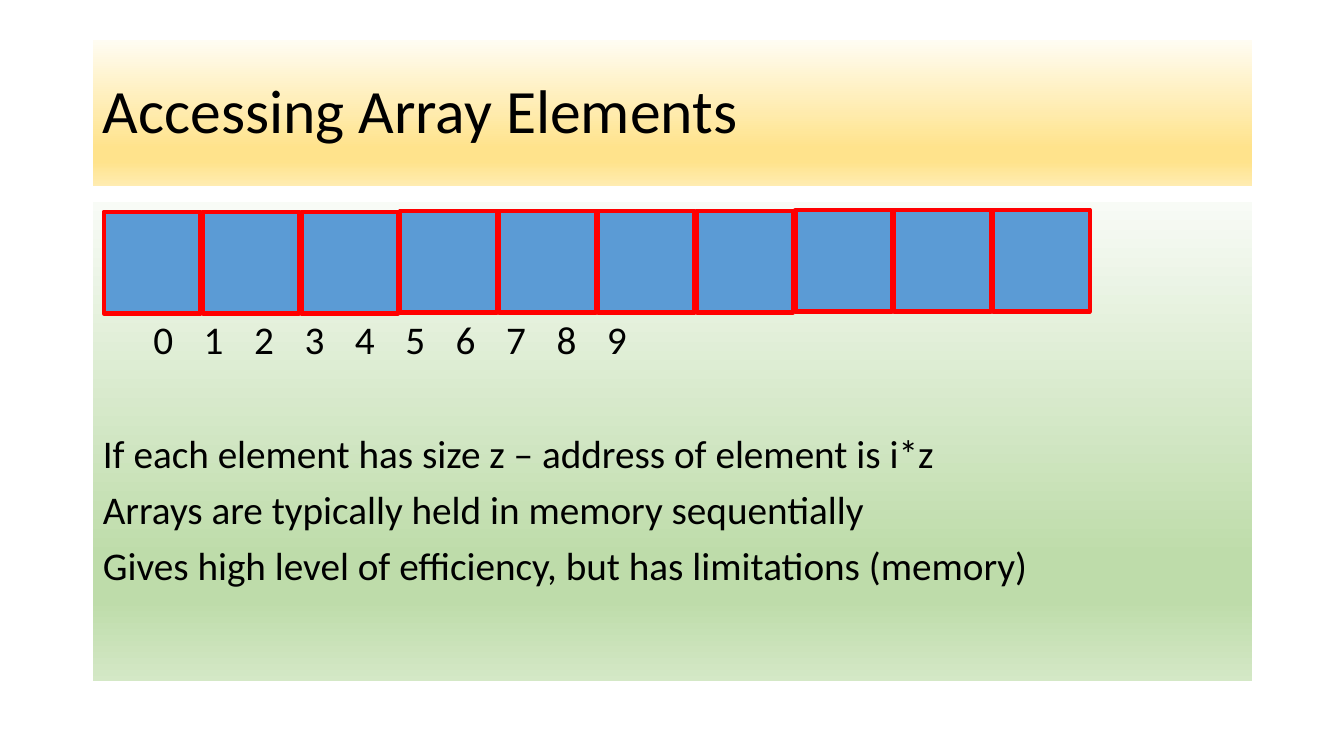
import pptx
import pptx.dml.color
import pptx.enum.shapes
import pptx.enum.text
import pptx.oxml
import pptx.oxml.ns
import pptx.util

EMU_PER_PX = 9144  # 100 px to the inch
FONT = "Calibri"
COLOURS = {"text": "000000", "cell": "5B9BD5", "cell_line": "FF0000"}
TITLE_GRADIENT = [(0, "FFFCF2"), (74, "FFE38C"), (83, "FFE38C"), (100, "FFECB2")]
BODY_GRADIENT = [(0, "F8FBF6"), (74, "BEDCAA"), (83, "BEDCAA"), (100, "D4E8C6")]

TEXT_LEFT = 102
CELL_LEFT, CELL_STEP, CELL_WIDTH, CELL_HEIGHT = 103, 98, 96, 101
CELL_TOPS = [210] * 3 + [209] * 4 + [208] * 3
INDEX_CENTRES = [147, 246, 335, 435, 533, 632, 721, 829, 928, 1019]
STATEMENTS = [
    "If each element has size z – address of element is i*z",
    "Arrays are typically held in memory sequentially",
    "Gives high level of efficiency, but has limitations (memory)",
]


def px(length):
    return pptx.util.Emu(length * EMU_PER_PX)


def colour(name):
    return pptx.dml.color.RGBColor.from_string(COLOURS[name])


def place(shape, left, top, width, height):
    shape.left, shape.top = px(left), px(top)
    shape.width, shape.height = px(width), px(height)


def fill_gradient(shape, stops):
    """Fill from top to bottom with (percent, colour) stops."""
    shape.fill.gradient()
    shape.fill.gradient_angle = 270
    stop_list = shape._element.spPr.find(".//" + pptx.oxml.ns.qn("a:gsLst"))
    stop_list.clear()
    for percent, value in stops:
        stop_list.append(pptx.oxml.parse_xml(
            f'<a:gs {pptx.oxml.ns.nsdecls("a")} pos="{percent * 1000}">'
            f'<a:srgbClr val="{value}"/></a:gs>'))


def format_paragraph(paragraph, size, space_before=0):
    paragraph.alignment = pptx.enum.text.PP_ALIGN.LEFT
    paragraph.line_spacing = 0.9
    paragraph.space_before = pptx.util.Pt(space_before)
    for run in paragraph.runs:
        run.font.name = FONT
        run.font.size = pptx.util.Pt(size)
        run.font.color.rgb = colour("text")


def remove_bullet(paragraph):
    properties = paragraph._p.get_or_add_pPr()
    properties.set("marL", "0")
    properties.set("indent", "0")
    properties.append(pptx.oxml.parse_xml(
        f'<a:buNone {pptx.oxml.ns.nsdecls("a")}/>'))


def add_centred_tabs(paragraph, centres):
    tabs = "".join(f'<a:tab pos="{px(centre - TEXT_LEFT)}" algn="ctr"/>'
                   for centre in centres)
    paragraph._p.get_or_add_pPr().append(pptx.oxml.parse_xml(
        f'<a:tabLst {pptx.oxml.ns.nsdecls("a")}>{tabs}</a:tabLst>'))


def add_title(slide):
    title = slide.shapes.title
    place(title, 92, 40, 1150, 145)
    fill_gradient(title, TITLE_GRADIENT)
    frame = title.text_frame
    frame.text = "Accessing Array Elements"
    frame.auto_size = pptx.enum.text.MSO_AUTO_SIZE.NONE
    frame.vertical_anchor = pptx.enum.text.MSO_ANCHOR.MIDDLE
    format_paragraph(frame.paragraphs[0], 44)


def add_body(slide):
    body = slide.placeholders[1]
    place(body, 92, 200, 1150, 476)
    fill_gradient(body, BODY_GRADIENT)
    frame = body.text_frame
    indices = "".join(f"\t{index}" for index in range(len(INDEX_CENTRES)))
    frame.text = "\n".join([indices] + STATEMENTS)
    frame.auto_size = pptx.enum.text.MSO_AUTO_SIZE.NONE
    frame.vertical_anchor = pptx.enum.text.MSO_ANCHOR.TOP
    frame.margin_top = px(118)  # leaves room for the array cells
    for paragraph, space_before in zip(frame.paragraphs, [0, 51, 10, 10]):
        format_paragraph(paragraph, 28, space_before)
        remove_bullet(paragraph)
    add_centred_tabs(frame.paragraphs[0], INDEX_CENTRES)


def add_cell(slide, left, top):
    cell = slide.shapes.add_shape(
        pptx.enum.shapes.MSO_SHAPE.RECTANGLE,
        px(left), px(top), px(CELL_WIDTH), px(CELL_HEIGHT))
    cell.shadow.inherit = False
    cell.fill.solid()
    cell.fill.fore_color.rgb = colour("cell")
    cell.line.color.rgb = colour("cell_line")
    cell.line.width = pptx.util.Pt(3)


def main():
    presentation = pptx.Presentation()
    presentation.slide_width, presentation.slide_height = px(1333), px(750)
    slide = presentation.slides.add_slide(presentation.slide_layouts[1])

    # Title and text
    add_title(slide)
    add_body(slide)

    # Array cells
    for index, top in enumerate(CELL_TOPS):
        add_cell(slide, CELL_LEFT + index * CELL_STEP, top)

    presentation.save("out.pptx")


if __name__ == "__main__":
    main()
